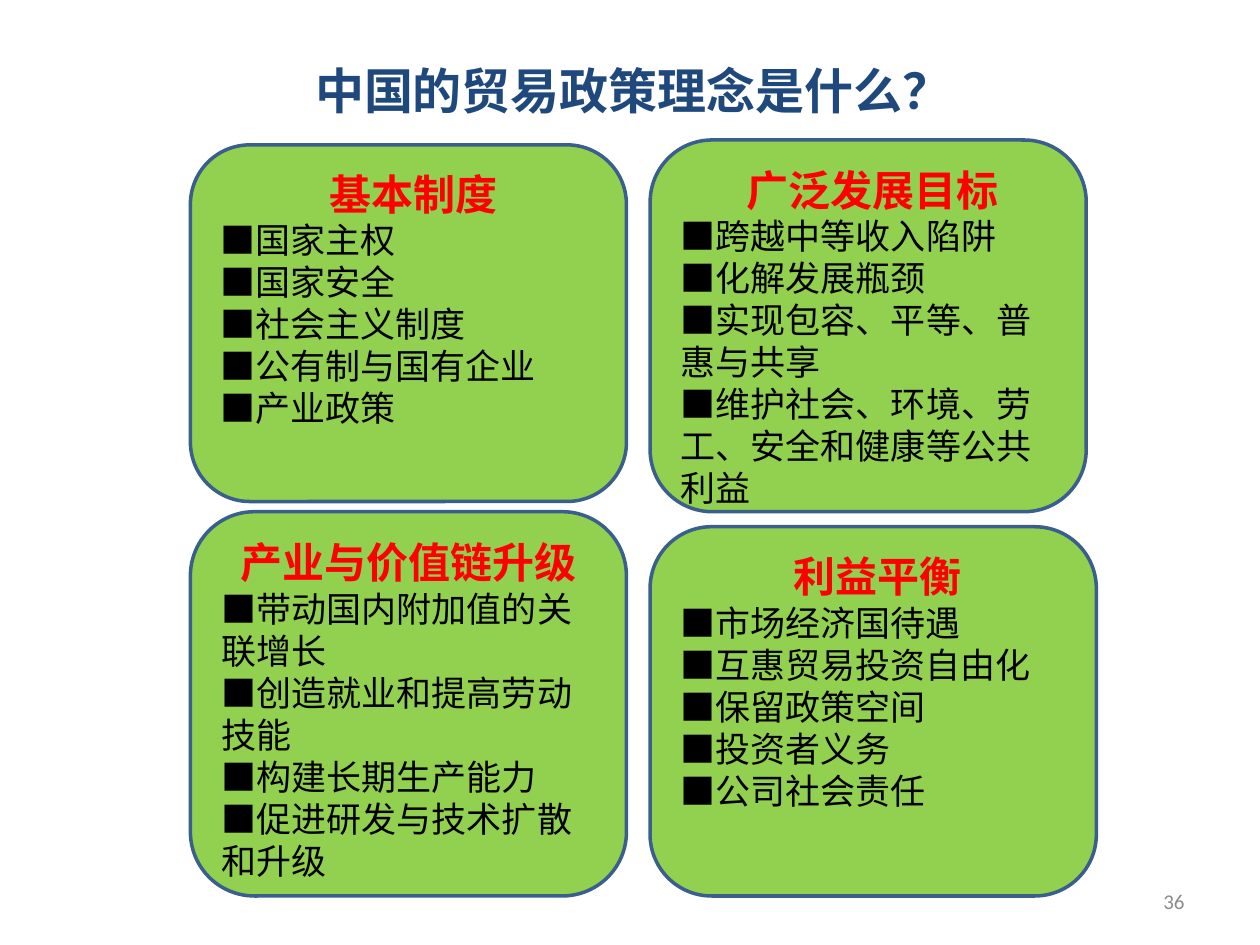
"""Build a slide of four rounded panels on the ideas behind China's trade policy."""
from dataclasses import dataclass

from pptx import Presentation
from pptx.dml.color import RGBColor
from pptx.enum.lang import MSO_LANGUAGE_ID
from pptx.enum.shapes import MSO_SHAPE
from pptx.enum.text import MSO_ANCHOR, PP_ALIGN
from pptx.util import Pt

ROUNDED = MSO_SHAPE.ROUNDED_RECTANGLE
LEFT, CENTER, RIGHT = PP_ALIGN.LEFT, PP_ALIGN.CENTER, PP_ALIGN.RIGHT
TOP, MIDDLE = MSO_ANCHOR.TOP, MSO_ANCHOR.MIDDLE
CHINESE = MSO_LANGUAGE_ID.SIMPLIFIED_CHINESE


@dataclass(frozen=True)
class Theme:
    font: str = "Calibri"
    title: str = "1F497D"
    heading: str = "FF0000"
    body: str = "000000"
    number: str = "8C8C8C"
    panel: str = "92D050"
    border: str = "3A5F8C"
    title_size: int = 28
    heading_size: int = 24
    body_size: int = 20
    number_size: int = 12
    border_width: int = 2


class SlideBuilder:
    def __init__(self, slide, theme):
        self.s = slide
        self.theme = theme

    def format(self, p, size, color, bold=False, align=LEFT):
        p.alignment = align
        for r in p.runs:
            r.font.name = self.theme.font
            r.font.size = Pt(size)
            r.font.bold = bold
            r.font.color.rgb = RGBColor.from_string(color)
            r.font.language_id = CHINESE

    def text(self, box, text, size, color, bold=False, align=LEFT, anchor=TOP):
        tf = self.s.shapes.add_textbox(*map(Pt, box)).text_frame
        tf.word_wrap = True
        tf.vertical_anchor = anchor
        tf.text = text
        self.format(tf.paragraphs[0], size, color, bold, align)

    def panel(self, box, heading, items):
        t = self.theme
        sp = self.s.shapes.add_shape(ROUNDED, *map(Pt, box))
        sp.shadow.inherit = False
        sp.fill.solid()
        sp.fill.fore_color.rgb = RGBColor.from_string(t.panel)
        sp.line.color.rgb = RGBColor.from_string(t.border)
        sp.line.width = Pt(t.border_width)
        tf = sp.text_frame
        tf.word_wrap = True
        tf.vertical_anchor = TOP
        tf.text = "\n".join([heading] + [f"■{item}" for item in items])
        first, *rest = tf.paragraphs
        self.format(first, t.heading_size, t.heading, True, CENTER)
        for p in rest:
            self.format(p, t.body_size, t.body)


PANELS = [
    ((108.8, 292.4, 249.2, 219.6), "产业与价值链升级",
     ["带动国内附加值的关联增长", "创造就业和提高劳动技能", "构建长期生产能力",
      "促进研发与技术扩散和升级"]),
    ((371.5, 80, 249.2, 212.4), " 广泛发展目标",
     ["跨越中等收入陷阱", "化解发展瓶颈", "实现包容、平等、普惠与共享",
      "维护社会、环境、劳工、安全和健康等公共利益"]),
    ((371.5, 301, 255, 211), " 利益平衡",
     ["市场经济国待遇", "互惠贸易投资自由化", "保留政策空间", "投资者义务",
      "公司社会责任"]),
    ((108.8, 82.8, 249.2, 203.8), " 基本制度",
     ["国家主权", "国家安全", "社会主义制度", "公有制与国有企业", "产业政策"]),
]


def main():
    prs = Presentation()
    prs.slide_width, prs.slide_height = Pt(720), Pt(540)
    theme = Theme()
    s = SlideBuilder(prs.slides.add_slide(prs.slide_layouts[6]), theme)
    s.text((516, 500.5, 168, 28.8), "36", theme.number_size, theme.number,
           align=RIGHT, anchor=MIDDLE)
    for box, heading, items in PANELS:
        s.panel(box, heading, items)
    s.text((173, 31, 397, 41), "中国的贸易政策理念是什么？",
           theme.title_size, theme.title, bold=True)
    prs.save("out.pptx")


if __name__ == "__main__":
    main()
